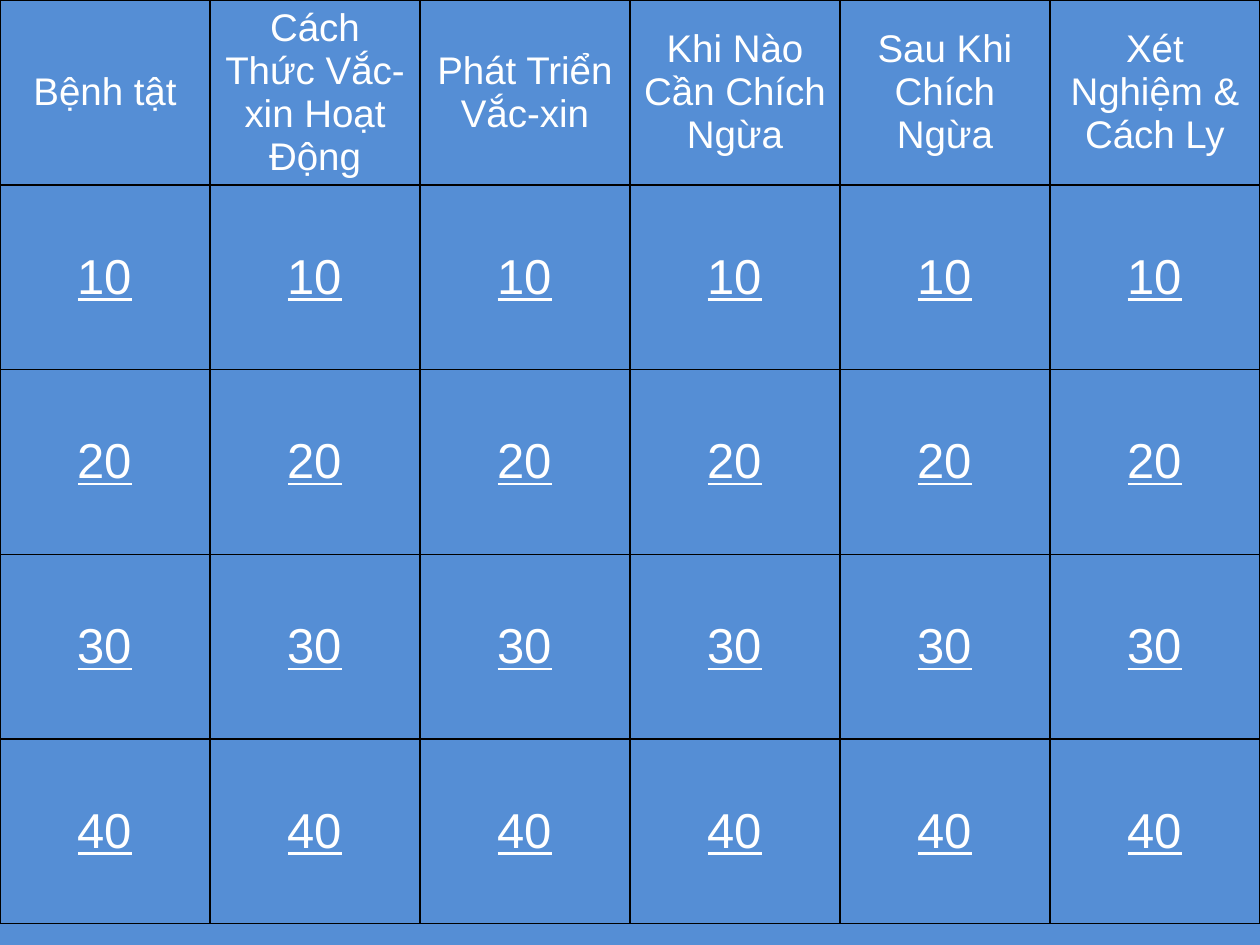
from dataclasses import dataclass

from lxml.etree import SubElement
from pptx import Presentation
from pptx.dml.color import RGBColor
from pptx.enum.text import MSO_ANCHOR, PP_ALIGN
from pptx.oxml.ns import qn
from pptx.table import _Cell
from pptx.util import Inches, Pt

BLUE, WHITE, BLACK = "558ED5", "FFFFFF", "000000"
TOPICS = [
    "Bệnh tật",
    "Cách Thức Vắc-xin Hoạt Động",
    "Phát Triển Vắc-xin",
    "Khi Nào Cần Chích Ngừa",
    "Sau Khi Chích Ngừa",
    "Xét Nghiệm & Cách Ly",
]
POINTS = [10, 20, 30, 40]


@dataclass(frozen=True)
class Style:
    size: int
    under: bool


HEAD = Style(22, False)
SCORE = Style(28, True)


def color(code: str) -> RGBColor:
    return RGBColor.from_string(code)


def border(cell: _Cell, code: str, width: float) -> None:
    """Line all four sides; call before the fill is set."""
    props = cell._tc.get_or_add_tcPr()
    for side in ("lnL", "lnR", "lnT", "lnB"):
        line = SubElement(props, qn(f"a:{side}"), w=str(Pt(width)))
        fill = SubElement(line, qn("a:solidFill"))
        SubElement(fill, qn("a:srgbClr"), val=code)


def write(cell: _Cell, text: str, style: Style) -> None:
    border(cell, BLACK, 1)
    cell.fill.background()
    cell.vertical_anchor = MSO_ANCHOR.MIDDLE
    para = cell.text_frame.paragraphs[0]
    para.alignment = PP_ALIGN.CENTER
    run = para.add_run()
    run.text = text
    run.font.name = "Arial"
    run.font.size = Pt(style.size)
    run.font.underline = style.under
    run.font.color.rgb = color(WHITE)


def main() -> None:
    deck = Presentation()
    deck.slide_width, deck.slide_height = Inches(10), Inches(7.5)
    slide = deck.slides.add_slide(deck.slide_layouts[6])
    slide.background.fill.solid()
    slide.background.fill.fore_color.rgb = color(BLUE)

    rows = [(TOPICS, HEAD)]
    rows += [([str(n)] * len(TOPICS), SCORE) for n in POINTS]
    board = slide.shapes.add_table(
        len(rows), len(TOPICS), 0, 0, Inches(10), Inches(7.33)
    ).table
    board.first_row = board.horz_banding = False
    for r, (texts, style) in enumerate(rows):
        for c, text in enumerate(texts):
            write(board.cell(r, c), text, style)

    deck.save("out.pptx")


if __name__ == "__main__":
    main()
